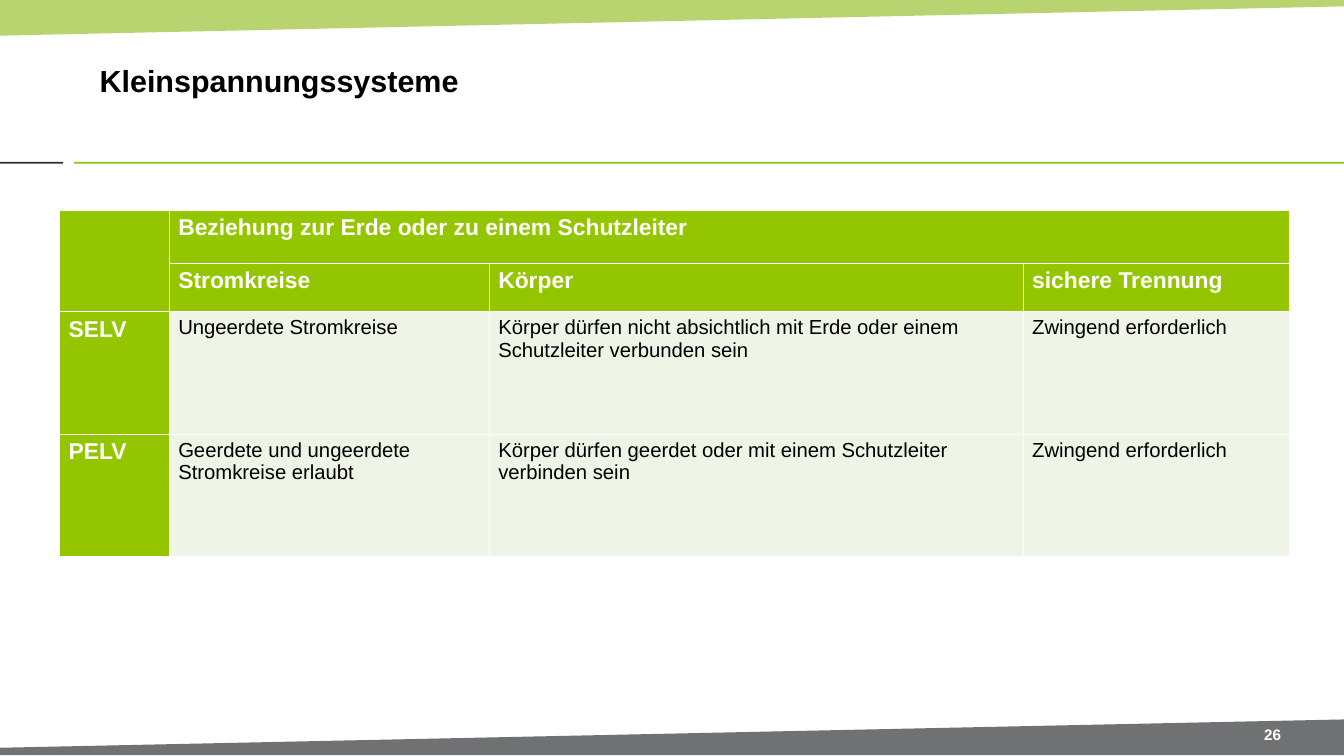
"""Build the slide on extra-low voltage systems with its comparison table."""
import pptx
import pptx.util
import pptx.dml.color
import pptx.enum.shapes
import pptx.enum.text
import pptx.oxml
import pptx.oxml.ns
from dataclasses import dataclass
from pptx.util import Inches

WIDE, HIGH = 14.7, 8.27
TITLE = "Kleinspannungssysteme"
PAGE = "26"
ROWS = [
    ["", "Beziehung zur Erde oder zu einem Schutzleiter", "", ""],
    ["", "Stromkreise", "Körper", "sichere Trennung"],
    ["SELV", "Ungeerdete Stromkreise",
     "Körper dürfen nicht absichtlich mit Erde oder einem Schutzleiter verbunden sein",
     "Zwingend erforderlich"],
    ["PELV", "Geerdete und ungeerdete Stromkreise erlaubt",
     "Körper dürfen geerdet oder mit einem Schutzleiter verbinden sein",
     "Zwingend erforderlich"],
]
COLS = [1.2, 3.5, 5.84, 2.92]
TALL = [0.58, 0.53, 1.34, 1.34]
SPANS = [((0, 0), (1, 0)), ((0, 1), (0, 3))]
HEADS = 2
TABLE = (0.65, 2.3)
TOP = [(0, 0), (WIDE, 0), (WIDE, 0.07), (0, 0.39)]
BASE = [(WIDE, 8.26), (0, 8.26), (0, 8.18), (WIDE, 7.87)]


@dataclass(frozen=True)
class Theme:
    font: str = "Arial"
    green: str = "94C600"
    leaf: str = "95C02A"
    pale: str = "EEF5E7"
    dark: str = "313130"
    gray: str = "707173"
    black: str = "000000"
    white: str = "FFFFFF"
    title: int = 24
    head: int = 18
    body: int = 16
    page: int = 12


LOOK = Theme()


def rgb(code):
    return pptx.dml.color.RGBColor.from_string(code)


def write(frame, text, size, color, bold=False, align=None, pad=(0.11, 0.06)):
    frame.word_wrap = True
    frame.margin_left = frame.margin_right = Inches(pad[0])
    frame.margin_top = frame.margin_bottom = Inches(pad[1])
    para = frame.paragraphs[0]
    para.text = text
    para.alignment = align
    font = para.font
    font.name, font.size, font.bold = LOOK.font, pptx.util.Pt(size), bold
    font.color.rgb = rgb(color)


def label(slide, place, text, **form):
    box = slide.shapes.add_textbox(*map(Inches, place))
    box.text_frame.vertical_anchor = pptx.enum.text.MSO_ANCHOR.MIDDLE
    write(box.text_frame, text, **form)


def paint(shape, color):
    shape.shadow.inherit = False
    shape.fill.solid()
    shape.fill.fore_color.rgb = rgb(color)
    shape.line.fill.background()


def band(slide, spots, color, alpha=100):
    first, *rest = [(Inches(x), Inches(y)) for x, y in spots]
    path = slide.shapes.build_freeform(*first)
    path.add_line_segments(rest)
    shape = path.convert_to_shape()
    paint(shape, color)
    if alpha < 100:
        tint = shape._element.spPr.find(".//" + pptx.oxml.ns.qn("a:srgbClr"))
        tint.append(pptx.oxml.parse_xml(
            f'<a:alpha {pptx.oxml.ns.nsdecls("a")} val="{alpha * 1000}"/>'))


def rule(slide, left, width, color):
    shape = slide.shapes.add_shape(
        pptx.enum.shapes.MSO_SHAPE.RECTANGLE,
        *map(Inches, (left, 1.77, width, 0.02)))
    paint(shape, color)


def edge(cell):
    props = cell._tc.get_or_add_tcPr()
    for side in "LRTB":
        props.append(pptx.oxml.parse_xml(
            f'<a:ln{side} {pptx.oxml.ns.nsdecls("a")} w="12700"><a:solidFill>'
            f'<a:srgbClr val="{LOOK.white}"/></a:solidFill></a:ln{side}>'))


def grid(slide):
    size = (sum(COLS), sum(TALL))
    table = slide.shapes.add_table(
        len(ROWS), len(COLS), *map(Inches, TABLE + size)).table
    for col, width in zip(table.columns, COLS):
        col.width = Inches(width)
    for row, height in zip(table.rows, TALL):
        row.height = Inches(height)
    for i, line in enumerate(ROWS):
        for j, text in enumerate(line):
            cell = table.cell(i, j)
            head = i < HEADS or j == 0
            write(cell.text_frame, text, bold=head, pad=(0.08, 0.04),
                  size=LOOK.head if head else LOOK.body,
                  color=LOOK.white if head else LOOK.black)
            edge(cell)
            cell.fill.solid()
            cell.fill.fore_color.rgb = rgb(LOOK.green if head else LOOK.pale)
    for start, end in SPANS:
        table.cell(*start).merge(table.cell(*end))


def main():
    deck = pptx.Presentation()
    deck.slide_width, deck.slide_height = Inches(WIDE), Inches(HIGH)
    slide = deck.slides.add_slide(deck.slide_layouts[6])
    band(slide, TOP, LOOK.leaf, alpha=67)
    rule(slide, 0, 0.69, LOOK.dark)
    rule(slide, 0.81, WIDE - 0.81, LOOK.green)
    band(slide, BASE, LOOK.gray)
    label(slide, (0.98, 0.28, 11.54, 1.19), TITLE,
          size=LOOK.title, color=LOOK.black, bold=True)
    label(slide, (13.49, 7.89, 0.86, 0.29), PAGE, size=LOOK.page,
          color=LOOK.white, bold=True, align=pptx.enum.text.PP_ALIGN.CENTER)
    grid(slide)
    deck.save("out.pptx")


if __name__ == "__main__":
    main()
